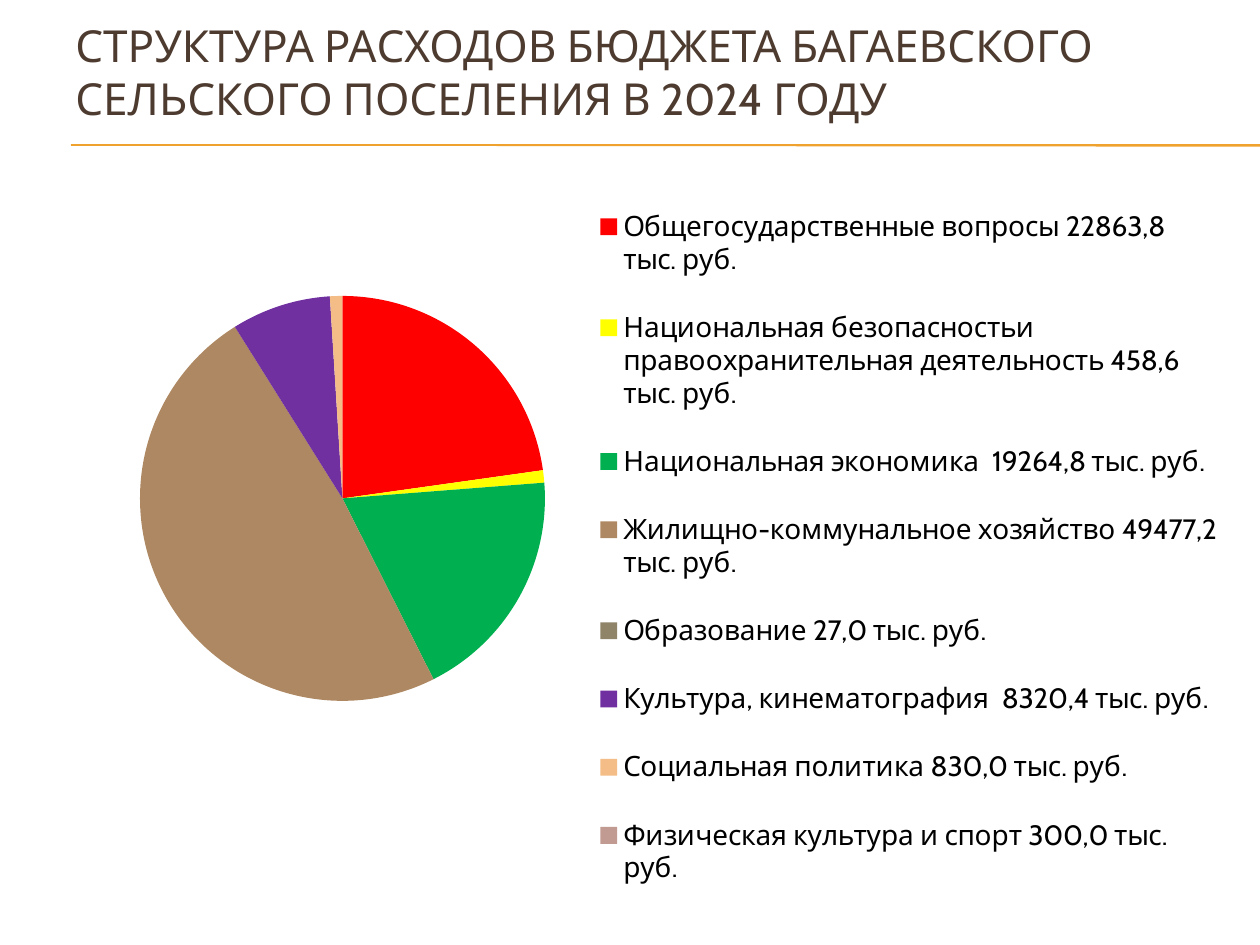
import pptx
import pptx.chart.data
import pptx.dml.color
import pptx.enum.chart
import pptx.enum.shapes
import pptx.enum.text
import pptx.oxml
import pptx.oxml.ns
import pptx.util
from lxml import etree

RGBColor = pptx.dml.color.RGBColor
BLACK = RGBColor(0x00, 0x00, 0x00)
BROWN = RGBColor(0x4E, 0x3B, 0x30)
ORANGE = RGBColor(0xF0, 0xA2, 0x2E)
RED = RGBColor(0xFF, 0x00, 0x00)
YELLOW = RGBColor(0xFF, 0xFF, 0x00)
GREEN = RGBColor(0x00, 0xB0, 0x50)
TAN = RGBColor(0xAE, 0x88, 0x62)
OLIVE = RGBColor(0x90, 0x84, 0x68)
PURPLE = RGBColor(0x70, 0x30, 0xA0)
PEACH = RGBColor(0xF4, 0xBC, 0x86)
ROSE = RGBColor(0xC1, 0x9A, 0x92)

EMU_PER_PX = 914400 / 126

# Label, share of spending in percent, colour
EXPENSES = [
    ("Общегосударственные вопросы 22863,8 тыс. руб.", 23, RED),
    ("Национальная безопасностьи правоохранительная деятельность 458,6 тыс. руб.",
     1, YELLOW),
    ("Национальная экономика  19264,8 тыс. руб.", 19, GREEN),
    ("Жилищно-коммунальное хозяйство 49477,2 тыс. руб.", 49, TAN),
    ("Образование 27,0 тыс. руб.", 0, OLIVE),
    ("Культура, кинематография  8320,4 тыс. руб.", 8, PURPLE),
    ("Социальная политика 830,0 тыс. руб.", 1, PEACH),
    ("Физическая культура и спорт 300,0 тыс. руб.", 0, ROSE),
]


def px(length):
    return pptx.util.Emu(round(length * EMU_PER_PX))


def write_text(frame, text, *, font, size, color):
    run = frame.paragraphs[0].add_run()
    run.text = text
    run.font.name = font
    run.font.size = pptx.util.Pt(size)
    run.font.color.rgb = color


def set_layout(element, area, box, inner=False):
    """Place a chart part: box in px within a chart of the given px area."""
    target = '<c:layoutTarget val="inner"/>' if inner else ""
    modes = '<c:xMode val="edge"/><c:yMode val="edge"/>'
    sizes = "".join(f'<c:{key} val="{length / whole:.4f}"/>'
                    for key, length, whole in zip("xywh", box, area * 2))
    layout = pptx.oxml.parse_xml(
        f'<c:layout {pptx.oxml.ns.nsdecls("c")}><c:manualLayout>'
        f"{target}{modes}{sizes}</c:manualLayout></c:layout>")
    for old in element.findall(pptx.oxml.ns.qn("c:layout")):
        element.remove(old)
    position = element.find(pptx.oxml.ns.qn("c:legendPos"))
    if position is None:
        element.insert(0, layout)
    else:
        position.addnext(layout)


class SlideBuilder:
    def __init__(self, slide, font):
        self.slide = slide
        self.font = font

    def rule(self, x1, y1, x2, y2, color, width):
        line = self.slide.shapes.add_connector(
            pptx.enum.shapes.MSO_CONNECTOR.STRAIGHT, px(x1), px(y1), px(x2), px(y2))
        line.line.color.rgb = color
        line.line.width = pptx.util.Pt(width)
        etree.SubElement(line._element.spPr, pptx.oxml.ns.qn("a:effectLst"))

    def title(self, text, x, y, w, h, size, color):
        box = self.slide.shapes.add_textbox(px(x), px(y), px(w), px(h))
        frame = box.text_frame
        frame.word_wrap = True
        frame.vertical_anchor = pptx.enum.text.MSO_ANCHOR.MIDDLE
        write_text(frame, text, font=self.font, size=size, color=color)

    def pie(self, rows, x, y, w, h, size, plot_box, legend_box):
        labels, shares, colors = zip(*rows)
        data = pptx.chart.data.CategoryChartData(number_format="0")
        data.categories = labels
        data.add_series("Series 1", shares)
        chart = self.slide.shapes.add_chart(
            pptx.enum.chart.XL_CHART_TYPE.PIE, px(x), px(y), px(w), px(h), data).chart
        chart.has_title = False
        chart.font.name = self.font
        chart.font.size = pptx.util.Pt(size)
        chart.font.color.rgb = BLACK
        chart.has_legend = True
        chart.legend.position = pptx.enum.chart.XL_LEGEND_POSITION.RIGHT
        chart.legend.include_in_layout = False
        plot = chart.plots[0]
        plot.vary_by_categories = True
        for index, color in enumerate(colors):
            fill = plot.series[0].points[index].format.fill
            fill.solid()
            fill.fore_color.rgb = color
        set_layout(chart._chartSpace.chart.plotArea, (w, h), plot_box, inner=True)
        set_layout(chart.legend._element, (w, h), legend_box)


def main():
    deck = pptx.Presentation()
    deck.slide_width, deck.slide_height = px(1260), px(945)
    builder = SlideBuilder(deck.slides.add_slide(deck.slide_layouts[6]), "Cabin")
    for right_y in (145, 146):
        builder.rule(71, 145, 1260, right_y, ORANGE, 0.75)
    builder.title("СТРУКТУРА РАСХОДОВ БЮДЖЕТА БАГАЕВСКОГО СЕЛЬСКОГО ПОСЕЛЕНИЯ В 2024 ГОДУ",
                  63, 16, 1134, 110, 25.2, BROWN)
    builder.pie(EXPENSES, 54, 175, 1181, 745, 16,
                plot_box=(50, 121, 477, 405), legend_box=(551, 0, 621, 745))
    deck.save("out.pptx")


if __name__ == "__main__":
    main()
